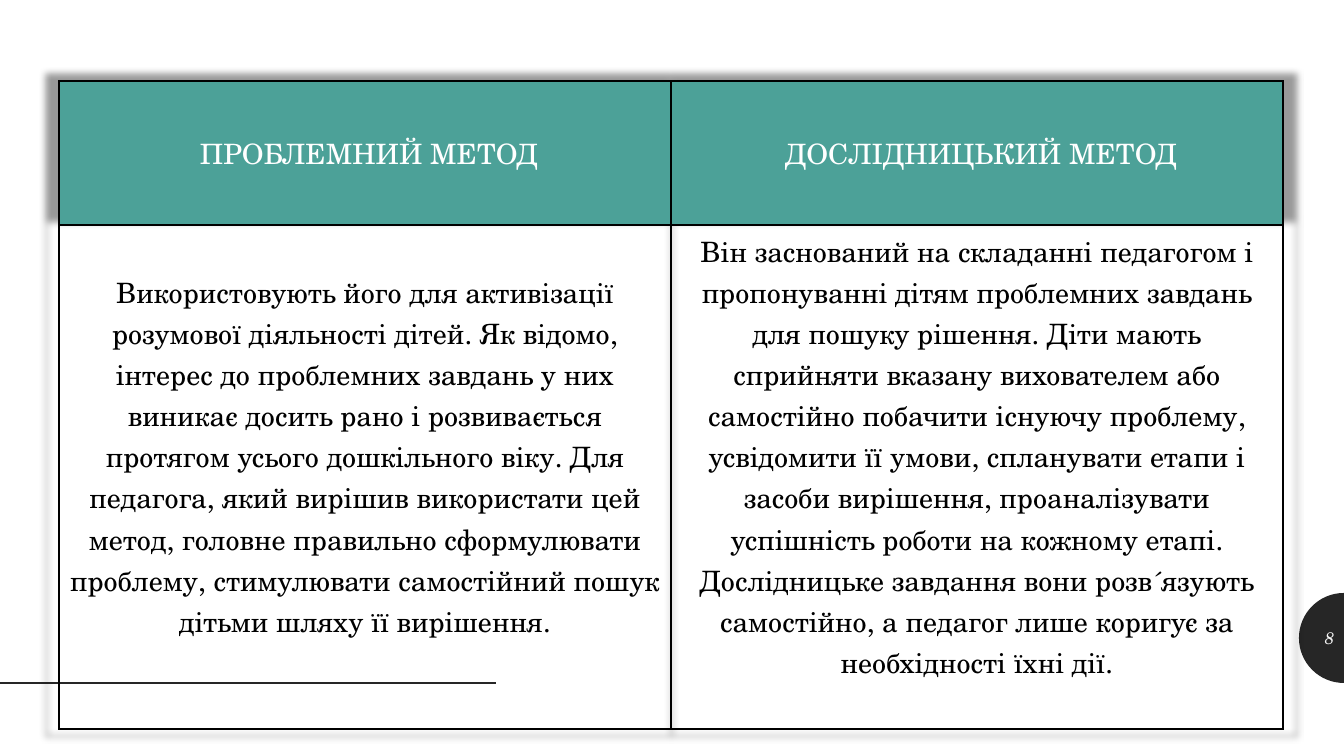
import math
import pptx
import pptx.dml.color
import pptx.enum.shapes
import pptx.enum.text
import pptx.oxml
import pptx.oxml.ns
import pptx.util

COLORS = {"dark": "262626", "teal": "4CA198", "white": "FFFFFF", "black": "000000", "pale": "F5F5F5"}
FONT = "TeX Gyre Schola"
METHODS = [
    ("ПРОБЛЕМНИЙ МЕТОД",
     "Використовують його для активізації розумової діяльності дітей. Як відомо, інтерес до проблемних "
     "завдань у них виникає досить рано і розвивається протягом усього дошкільного віку. Для педагога, "
     "який вирішив використати цей метод, головне правильно сформулювати проблему, стимулювати "
     "самостійний пошук дітьми шляху її вирішення."),
    ("ДОСЛІДНИЦЬКИЙ МЕТОД",
     "Він заснований на складанні педагогом і пропонуванні дітям проблемних завдань для пошуку рішення. "
     "Діти мають сприйняти вказану вихователем або самостійно побачити існуючу проблему, усвідомити її "
     "умови, спланувати етапи і засоби вирішення, проаналізувати успішність роботи на кожному етапі. "
     "Дослідницьке завдання вони розв´язують самостійно, а педагог лише коригує за необхідності їхні дії."),
]
PAGE_NUMBER = "8"
SLIDE_W, SLIDE_H = 1344, 756
TABLE_LEFT, TABLE_TOP, COLUMN_W = 59, 81, 612
ROWS = [
    {"height": 144, "fill": "teal", "color": "white", "margins": {"margin_left": 18, "margin_bottom": 5}},
    {"height": 504, "fill": None, "color": "black", "margins": {"margin_left": 10, "margin_bottom": 46}},
]
BADGE_Y, BADGE_R = 638, 45
RULE_Y, RULE_W = 683, 496
NS = pptx.oxml.ns.nsdecls("a")


def px(n):
    return pptx.util.Emu(round(n * 914400 / 100.8))


def rgb(name):
    return pptx.dml.color.RGBColor.from_string(COLORS[name])


def write(tf, text, align, color, **formats):
    p = tf.paragraphs[0]
    p.alignment = align
    r = p.add_run()
    r.text = text
    r.font.color.rgb = rgb(color)
    for name, value in {"name": FONT, "bold": False, **formats}.items():
        setattr(r.font, name, value)


def add_borders(cell):
    tcPr = cell._tc.get_or_add_tcPr()
    for i, side in enumerate(("lnL", "lnR", "lnT", "lnB")):
        tcPr.insert(i, pptx.oxml.parse_xml(
            f'<a:{side} {NS} w="12700"><a:solidFill><a:srgbClr val="{COLORS["black"]}"/>'
            f'</a:solidFill></a:{side}>'))


def add_badge(s):
    points = [(SLIDE_W - BADGE_R * math.sin(math.pi * i / 32), BADGE_Y - BADGE_R * math.cos(math.pi * i / 32))
              for i in range(33)]
    builder = s.shapes.build_freeform(px(points[0][0]), px(points[0][1]), scale=1.0)
    builder.add_line_segments([(px(x), px(y)) for x, y in points[1:]], close=True)
    sp = builder.convert_to_shape()
    sp.shadow.inherit = False
    sp.fill.solid()
    sp.fill.fore_color.rgb = rgb("dark")
    sp.line.fill.background()


def add_rule(s):
    rule = s.shapes.add_connector(pptx.enum.shapes.MSO_CONNECTOR.STRAIGHT, 0, px(RULE_Y), px(RULE_W), px(RULE_Y))
    rule.line.color.rgb = rgb("dark")
    rule.line.width = pptx.util.Pt(2)
    rule._element.spPr.append(pptx.oxml.parse_xml(f"<a:effectLst {NS}/>"))


def add_page_number(s):
    box = s.shapes.add_textbox(px(SLIDE_W - BADGE_R), px(BADGE_Y - 20), px(BADGE_R), px(40))
    tf = box.text_frame
    tf.word_wrap = True
    tf.vertical_anchor = pptx.enum.text.MSO_ANCHOR.MIDDLE
    write(tf, PAGE_NUMBER, pptx.enum.text.PP_ALIGN.RIGHT, "pale", size=pptx.util.Pt(12), italic=True)


def add_methods_table(s):
    height = sum(row["height"] for row in ROWS)
    table = s.shapes.add_table(len(ROWS), len(METHODS), px(TABLE_LEFT), px(TABLE_TOP),
                               px(COLUMN_W * len(METHODS)), px(height)).table
    table.first_row = table.horz_banding = False
    table._tbl.tblPr.insert(0, pptx.oxml.parse_xml(
        f'<a:effectLst {NS}><a:outerShdw blurRad="63500" sx="102000" sy="102000" algn="ctr" rotWithShape="0">'
        f'<a:srgbClr val="{COLORS["black"]}"><a:alpha val="40000"/></a:srgbClr></a:outerShdw></a:effectLst>'))
    for i, row in enumerate(ROWS):
        table.rows[i].height = px(row["height"])
        for j, method in enumerate(METHODS):
            cell = table.cell(i, j)
            cell.vertical_anchor = pptx.enum.text.MSO_ANCHOR.MIDDLE
            for name, value in {"margin_right": 10, "margin_top": 5, **row["margins"]}.items():
                setattr(cell, name, px(value))
            if row["fill"]:
                cell.fill.solid()
                cell.fill.fore_color.rgb = rgb(row["fill"])
            else:
                cell.fill.background()
            add_borders(cell)
            write(cell.text_frame, method[i], pptx.enum.text.PP_ALIGN.CENTER, row["color"], size=pptx.util.Pt(20))


def main():
    prs = pptx.Presentation()
    prs.slide_width, prs.slide_height = px(SLIDE_W), px(SLIDE_H)
    s = prs.slides.add_slide(prs.slide_layouts[6])
    add_badge(s)
    add_rule(s)
    add_page_number(s)
    add_methods_table(s)
    prs.save("out.pptx")


if __name__ == "__main__":
    main()
